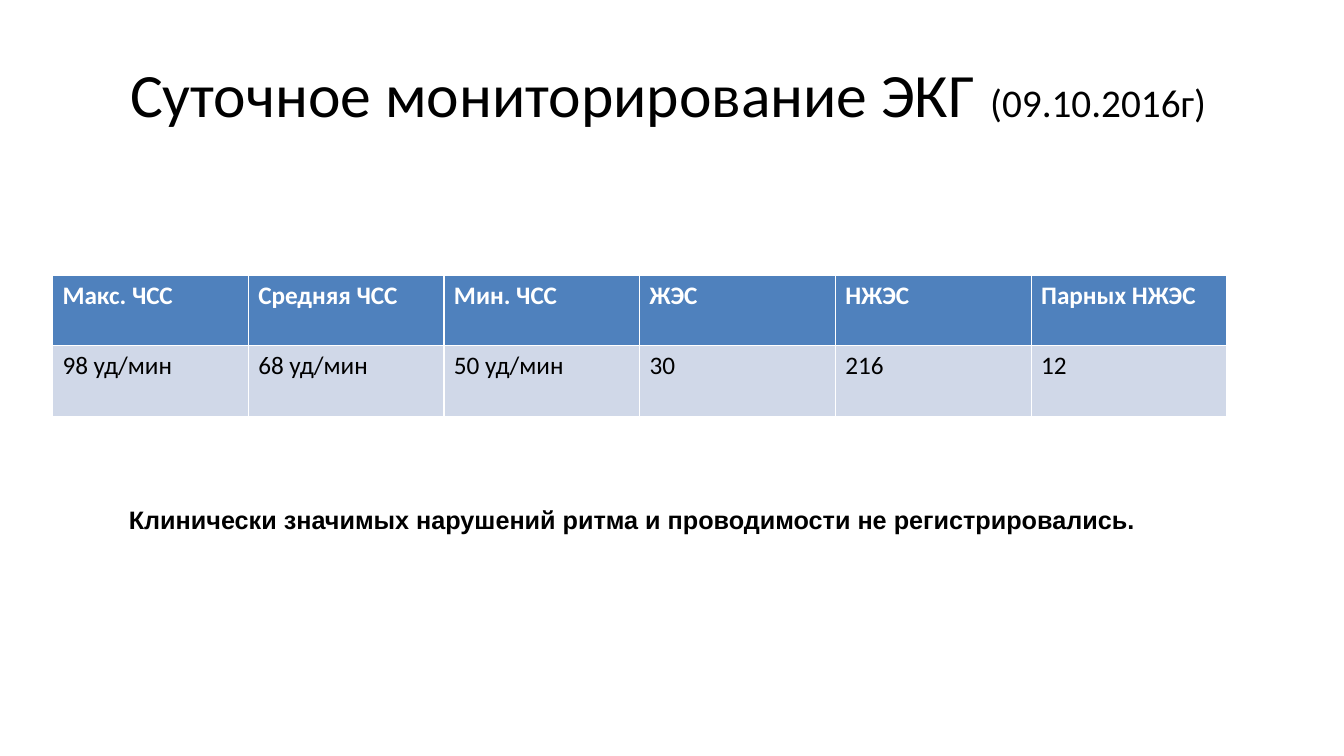
import pptx
import pptx.dml.color
import pptx.enum.text
import pptx.util

Inches = pptx.util.Inches

TITLE_RUNS = [
    ("Суточное мониторирование ЭКГ ", {"name": "Calibri", "size": 44}),
    ("(09.10.2016г) ", {"name": "Calibri", "size": 28}),
]
CONCLUSION_RUNS = [
    ("Клинически значимых нарушений ритма и проводимости не регистрировались.",
     {"name": "Arial", "size": 18, "bold": True}),
]
ECG_ROWS = [
    ("Макс. ЧСС", "Средняя ЧСС", "Мин. ЧСС", "ЖЭС", "НЖЭС", "Парных НЖЭС"),
    ("98 уд/мин", "68 уд/мин", "50 уд/мин", "30", "216", "12"),
]
ROW_STYLES = [
    ("4F81BD", {"name": "Calibri", "size": 18, "bold": True, "color": "FFFFFF"}),
    ("D0D8E8", {"name": "Calibri", "size": 18, "bold": False}),
]
TABLE_LEFT, TABLE_TOP, TABLE_WIDTH, ROW_HEIGHT = 0.52, 2.73, 11.65, 0.7


def set_color(color_format, color):
    color_format.rgb = pptx.dml.color.RGBColor.from_string(color)


def add_run(paragraph, text, text_format):
    run = paragraph.add_run()
    run.text = text
    values = dict(text_format)
    set_color(run.font.color, values.pop("color", "000000"))
    values["size"] = pptx.util.Pt(values["size"])
    for name, value in values.items():
        setattr(run.font, name, value)


def add_text(slide, box, runs, frame_format, alignment):
    shape = slide.shapes.add_textbox(*map(Inches, box))
    frame = shape.text_frame
    for name, value in frame_format.items():
        setattr(frame, name, value)
    paragraph = frame.paragraphs[0]
    paragraph.alignment = alignment
    for text, text_format in runs:
        add_run(paragraph, text, text_format)


def add_ecg_table(slide):
    column_count = len(ECG_ROWS[0])
    table = slide.shapes.add_table(
        len(ECG_ROWS), column_count, Inches(TABLE_LEFT), Inches(TABLE_TOP),
        Inches(TABLE_WIDTH), Inches(ROW_HEIGHT * len(ECG_ROWS))).table
    for row_index, (texts, (fill, text_format)) in enumerate(zip(ECG_ROWS, ROW_STYLES)):
        for column_index, text in enumerate(texts):
            cell = table.cell(row_index, column_index)
            cell.fill.solid()
            set_color(cell.fill.fore_color, fill)
            add_run(cell.text_frame.paragraphs[0], text, text_format)


def main():
    presentation = pptx.Presentation()
    presentation.slide_width = Inches(13.33)
    presentation.slide_height = Inches(7.5)
    slide = presentation.slides.add_slide(presentation.slide_layouts[6])
    anchors = pptx.enum.text.MSO_ANCHOR
    alignments = pptx.enum.text.PP_ALIGN
    add_text(slide, (0.67, 0.3, 12, 1.25), TITLE_RUNS,
             {"word_wrap": True, "vertical_anchor": anchors.MIDDLE}, alignments.CENTER)
    add_ecg_table(slide)
    add_text(slide, (1.18, 4.95, 10.96, 0.71), CONCLUSION_RUNS,
             {"word_wrap": True, "vertical_anchor": anchors.TOP}, alignments.LEFT)
    presentation.save("out.pptx")


if __name__ == "__main__":
    main()
